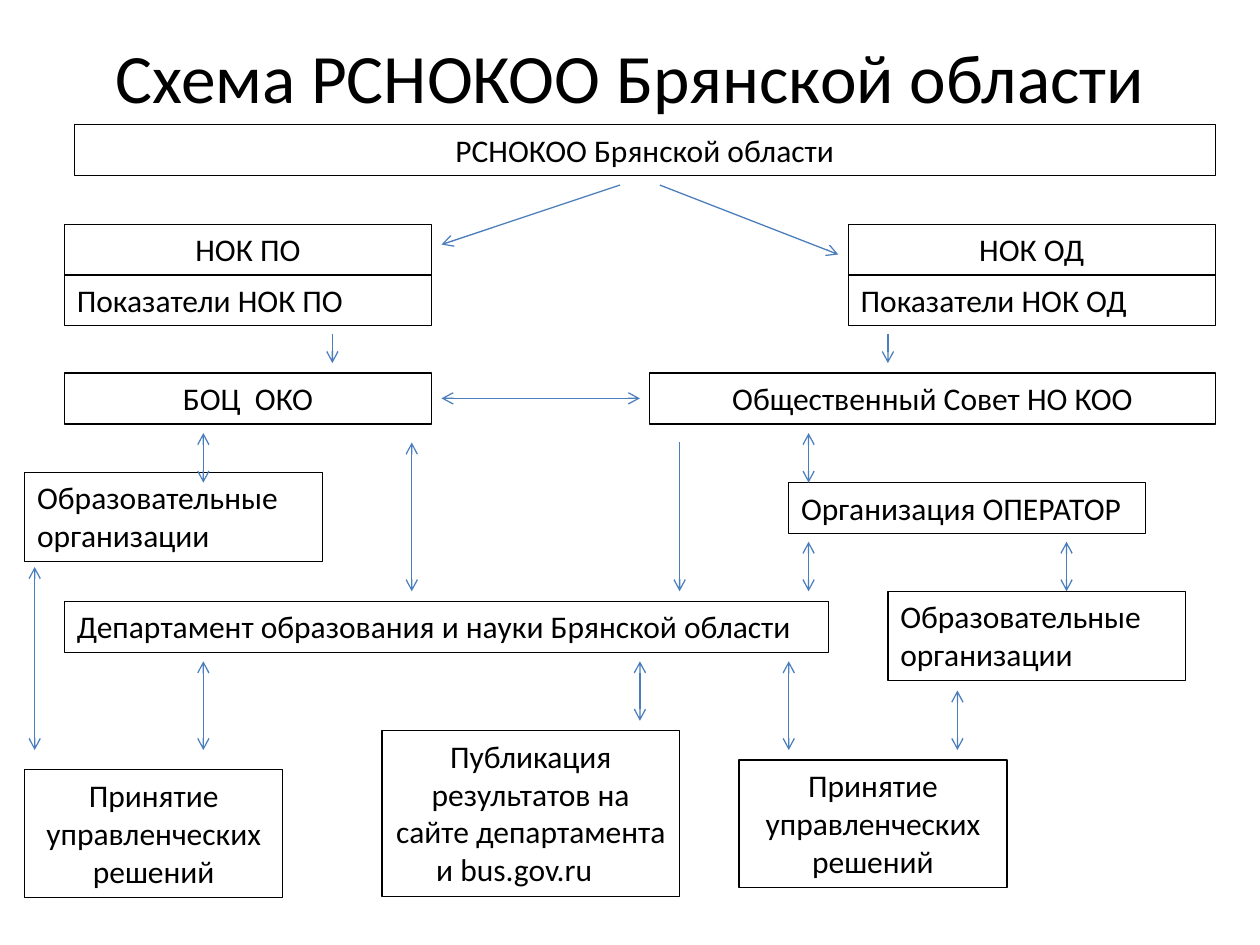
"""Builds the slide with the scheme of education quality assessment."""
from lxml import etree
from pptx import Presentation
from pptx.dml.color import RGBColor
from pptx.enum.shapes import MSO_CONNECTOR
from pptx.enum.text import MSO_ANCHOR, MSO_AUTO_SIZE, PP_ALIGN
from pptx.oxml.ns import qn
from pptx.util import Cm, Pt

LEFT, CENTER = PP_ALIGN.LEFT, PP_ALIGN.CENTER
MIDDLE = MSO_ANCHOR.MIDDLE
NO_FIT, GROW = MSO_AUTO_SIZE.NONE, MSO_AUTO_SIZE.SHAPE_TO_FIT_TEXT
STRAIGHT = MSO_CONNECTOR.STRAIGHT

FONT, BLACK, BLUE = "Calibri", "000000", "4B7EBC"
LINE_WIDTH = 0.75
TEXT_LINE, PADDING = 0.77, 0.26

TITLE = "Схема РСНОКОО Брянской области"
SCHOOLS = "Образовательные организации"
DECISIONS = "Принятие управленческих решений"

# text, left, top, width, number of text lines, alignment
BOXES = [
    ("РСНОКОО Брянской области", 1.5, 2.51, 23, 1, CENTER),
    ("НОК ПО", 1.3, 4.52, 7.4, 1, CENTER),
    ("НОК ОД", 17.1, 4.52, 7.4, 1, CENTER),
    ("Показатели НОК ПО", 1.3, 5.54, 7.4, 1, LEFT),
    ("Показатели НОК ОД", 17.1, 5.54, 7.4, 1, LEFT),
    ("БОЦ  ОКО", 1.3, 7.52, 7.4, 1, CENTER),
    ("Общественный Совет НО КОО", 13.1, 7.52, 11.4, 1, CENTER),
    (SCHOOLS, 0.5, 9.52, 6, 2, LEFT),
    (SCHOOLS, 17.9, 11.92, 6, 2, LEFT),
    ("Организация ОПЕРАТОР", 15.9, 9.73, 7.2, 1, LEFT),
    ("Департамент образования и науки Брянской области", 1.3, 12.12, 15.4, 1, LEFT),
    ("Публикация результатов на сайте департамента и bus.gov.ru\t", 7.7, 14.73, 6, 4, CENTER),
    (DECISIONS, 14.9, 15.32, 5.4, 3, CENTER),
    (DECISIONS, 0.5, 15.52, 5.2, 3, CENTER),
]

ONE_WAY = [
    (12.5, 3.73, 8.9, 4.93),
    (13.3, 3.73, 16.9, 5.13),
    (17.9, 6.73, 17.9, 7.32),
    (6.7, 6.73, 6.7, 7.32),
    (13.7, 8.92, 13.7, 11.92),
]
TWO_WAY = [
    (8.3, 8.92, 8.3, 11.92),
    (16.3, 10.92, 16.3, 11.92),
    (21.5, 10.92, 21.5, 11.92),
    (12.9, 13.33, 12.9, 14.53),
    (4.1, 13.33, 4.1, 15.12),
    (15.9, 13.33, 15.9, 15.12),
    (4.1, 8.73, 4.1, 9.73),
    (16.3, 8.73, 16.3, 9.73),
    (8.9, 8.03, 12.9, 8.03),
    (0.7, 11.43, 0.7, 15.12),
    (19.3, 13.92, 19.3, 15.12),
]


def color(hex_value):
    return RGBColor.from_string(hex_value)


def set_line(line, hex_value):
    line.color.rgb = color(hex_value)
    line.width = Pt(LINE_WIDTH)


def write(shape, text, size, alignment):
    shape.text_frame.text = text
    paragraph = shape.text_frame.paragraphs[0]
    paragraph.alignment = alignment
    font = paragraph.runs[0].font
    font.name, font.size, font.color.rgb = FONT, Pt(size), color(BLACK)


def add_title(slide):
    title = slide.shapes.title
    title.left, title.top, title.width, title.height = Cm(1.27), Cm(0.76), Cm(22.86), Cm(1.55)
    write(title, TITLE, 39.6, CENTER)
    title.text_frame.auto_size = NO_FIT
    title.text_frame.vertical_anchor = MIDDLE


def add_box(slide, text, left, top, width, lines, alignment):
    height = PADDING + TEXT_LINE * lines
    box = slide.shapes.add_textbox(Cm(left), Cm(top), Cm(width), Cm(height))
    write(box, text, 18, alignment)
    box.text_frame.word_wrap = True
    box.text_frame.auto_size = GROW
    set_line(box.line, BLACK)


def add_arrow(slide, ends, arrowheads):
    connector = slide.shapes.add_connector(STRAIGHT, *[Cm(value) for value in ends])
    set_line(connector.line, BLUE)
    properties = connector.element.spPr
    outline = properties.find(qn("a:ln"))
    for arrowhead in arrowheads:
        etree.SubElement(outline, qn(arrowhead), type="arrow")
    etree.SubElement(properties, qn("a:effectLst"))


def main():
    presentation = Presentation()
    presentation.slide_width, presentation.slide_height = Cm(25.4), Cm(19.05)
    slide = presentation.slides.add_slide(presentation.slide_layouts[5])
    add_title(slide)
    for box in BOXES:
        add_box(slide, *box)
    for ends in ONE_WAY:
        add_arrow(slide, ends, ["a:tailEnd"])
    for ends in TWO_WAY:
        add_arrow(slide, ends, ["a:headEnd", "a:tailEnd"])
    presentation.save("out.pptx")


if __name__ == "__main__":
    main()
